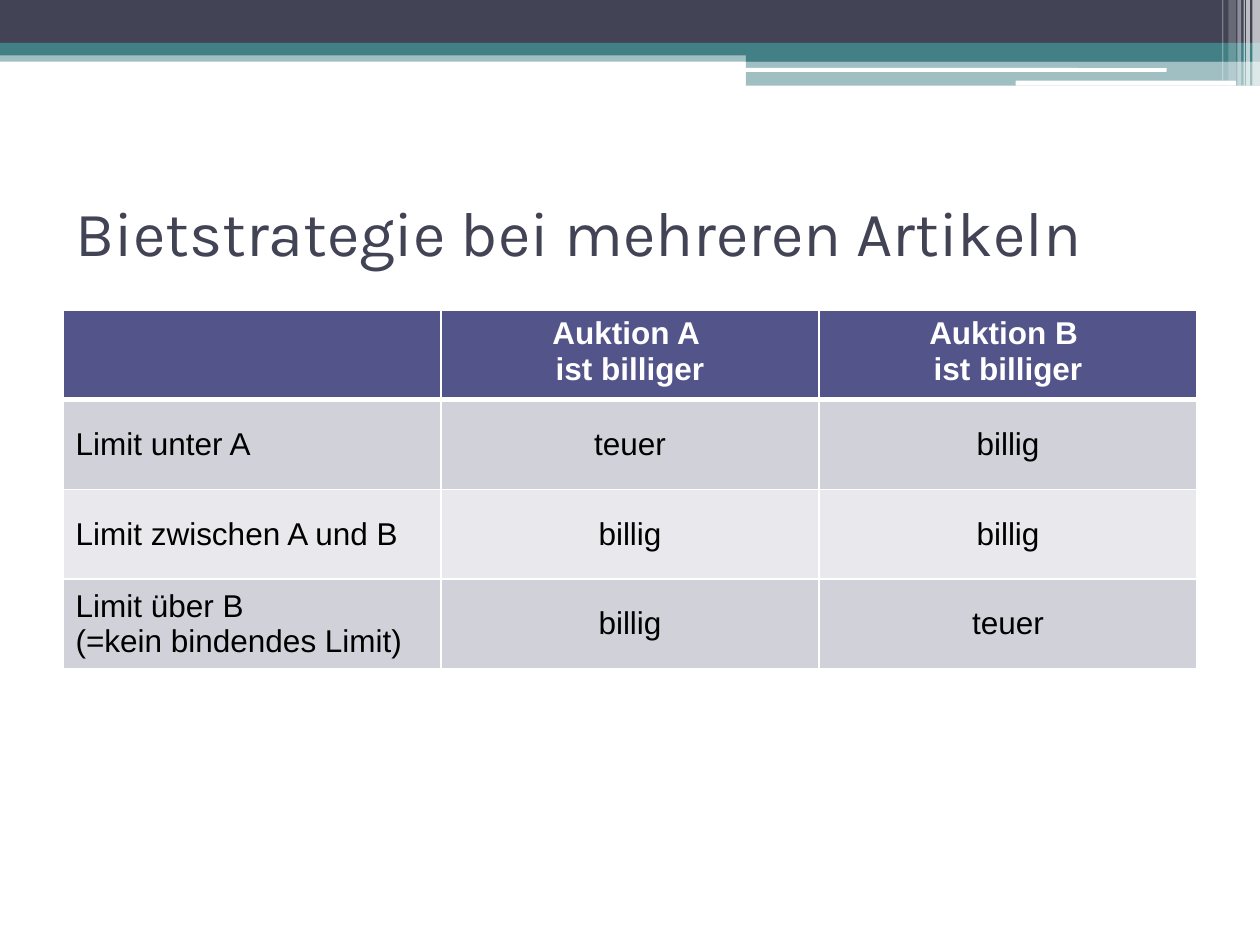
import lxml.etree
import pptx
import pptx.dml.color
import pptx.enum.shapes
import pptx.enum.text
import pptx.oxml
import pptx.oxml.ns
import pptx.util

# The slide is a grid of square cells; all boxes are (column, row, columns, rows)
COLUMNS, ROWS = 100, 75
CELL = pptx.util.Inches(0.1)

SLATE, TEAL, WHITE, BLACK = "424456", "438086", "FFFFFF", "000000"
HEADER_FILL, BAND_FILLS = "53548A", ("D1D1DA", "E9E9ED")

STRATEGIES = [
    ("", "Auktion A \nist billiger", "Auktion B \nist billiger"),
    ("Limit unter A", "teuer", "billig"),
    ("Limit zwischen A und B", "billig", "billig"),
    ("Limit über B\n(=kein bindendes Limit)", "billig", "teuer"),
]


def color(hex_string):
    return pptx.dml.color.RGBColor.from_string(hex_string)


def grid(*lengths):
    return [round(length * CELL) for length in lengths]


def add_bar(slide, box, fill, opacity=100, rounded=False):
    kinds = pptx.enum.shapes.MSO_SHAPE
    kind = kinds.ROUNDED_RECTANGLE if rounded else kinds.RECTANGLE
    bar = slide.shapes.add_shape(kind, *grid(*box))
    bar.shadow.inherit = False
    bar.line.fill.background()
    bar.fill.solid()
    bar.fill.fore_color.rgb = color(fill)
    if opacity < 100:
        srgb = bar.fill._xPr.find(".//" + pptx.oxml.ns.qn("a:srgbClr"))
        alpha = lxml.etree.SubElement(srgb, pptx.oxml.ns.qn("a:alpha"))
        alpha.set("val", str(opacity * 1000))


def add_banner(slide, box):
    left, top, width, height = box
    right = left + width
    step = 59.2  # where the banner becomes taller

    # Full-width bands: row, height, fill, opacity
    for row, rows, fill, opacity in [
        (4, 0.9, TEAL, 50), (0, 3.4, SLATE, 100), (3.4, 1, TEAL, 100),
    ]:
        add_bar(slide, (left, top + row, width, rows), fill, opacity)

    # Taller part on the right
    for row, rows, opacity in [(3.9, 1, 100), (4.8, 2, 50)]:
        add_bar(slide, (left + step, top + row, width - step, rows), TEAL, opacity)

    # White accent lines
    for column, row, columns, rows in [(59.1, 5.4, 33.5, 0.3), (80.6, 6.4, 17.5, 0.4)]:
        add_bar(slide, (left + column, top + row, columns, rows), WHITE, rounded=True)

    # Translucent stripes: distance from the right edge, width, height, opacity
    short = height - 0.4
    for inset, columns, rows, opacity in [
        (0.6, 0.6, height, 65), (1.1, 0.3, height, 65), (1.3, 0.1, height, 60),
        (1.8, 0.3, height, 40), (2.5, 0.6, short, 20), (3, 0.1, short, 30),
    ]:
        add_bar(slide, (right - inset, top, columns, rows), WHITE, opacity)


def add_title(slide, box, text):
    frame = slide.shapes.add_textbox(*grid(*box)).text_frame
    frame.word_wrap = True
    frame.vertical_anchor = pptx.enum.text.MSO_ANCHOR.MIDDLE
    frame.text = text
    font = frame.paragraphs[0].font
    font.name, font.size = "Karla", pptx.util.Pt(36)
    font.color.rgb = color(SLATE)


def set_borders(cell, top, bottom):
    properties = cell._tc.get_or_add_tcPr()
    for side, points in [("L", 1), ("R", 1), ("T", top), ("B", bottom)]:
        properties.append(pptx.oxml.parse_xml(
            f'<a:ln{side} {pptx.oxml.ns.nsdecls("a")} w="{pptx.util.Pt(points)}">'
            f'<a:solidFill><a:srgbClr val="{WHITE}"/></a:solidFill></a:ln{side}>'))


def add_strategy_table(slide, box, rows):
    frame = slide.shapes.add_table(len(rows), len(rows[0]), *grid(*box))
    for r, row in enumerate(rows):
        header = r == 0
        for c, text in enumerate(row):
            cell = frame.table.cell(r, c)
            # Thick rule between the header and the body
            set_borders(cell, top=3 if r == 1 else 1, bottom=3 if header else 1)
            cell.fill.solid()
            cell.fill.fore_color.rgb = color(HEADER_FILL if header else BAND_FILLS[(r - 1) % 2])
            anchors = pptx.enum.text.MSO_ANCHOR
            cell.vertical_anchor = anchors.TOP if header else anchors.MIDDLE
            cell.text = text
            for paragraph in cell.text_frame.paragraphs:
                if c > 0:
                    paragraph.alignment = pptx.enum.text.PP_ALIGN.CENTER
                font = paragraph.font
                font.name, font.size, font.bold = "Arial", pptx.util.Pt(18), header
                font.color.rgb = color(WHITE if header else BLACK)


def main():
    deck = pptx.Presentation()
    deck.slide_width, deck.slide_height = grid(COLUMNS, ROWS)
    slide = deck.slides.add_slide(deck.slide_layouts[6])

    margin = 5
    content_width = COLUMNS - 2 * margin
    add_banner(slide, (0, 0, COLUMNS, 6.8))
    add_title(slide, (margin, 12.5, content_width, 11.7), "Bietstrategie bei mehreren Artikeln")
    add_strategy_table(slide, (margin, 24.6, content_width, 28.5), STRATEGIES)
    deck.save("out.pptx")


if __name__ == "__main__":
    main()
